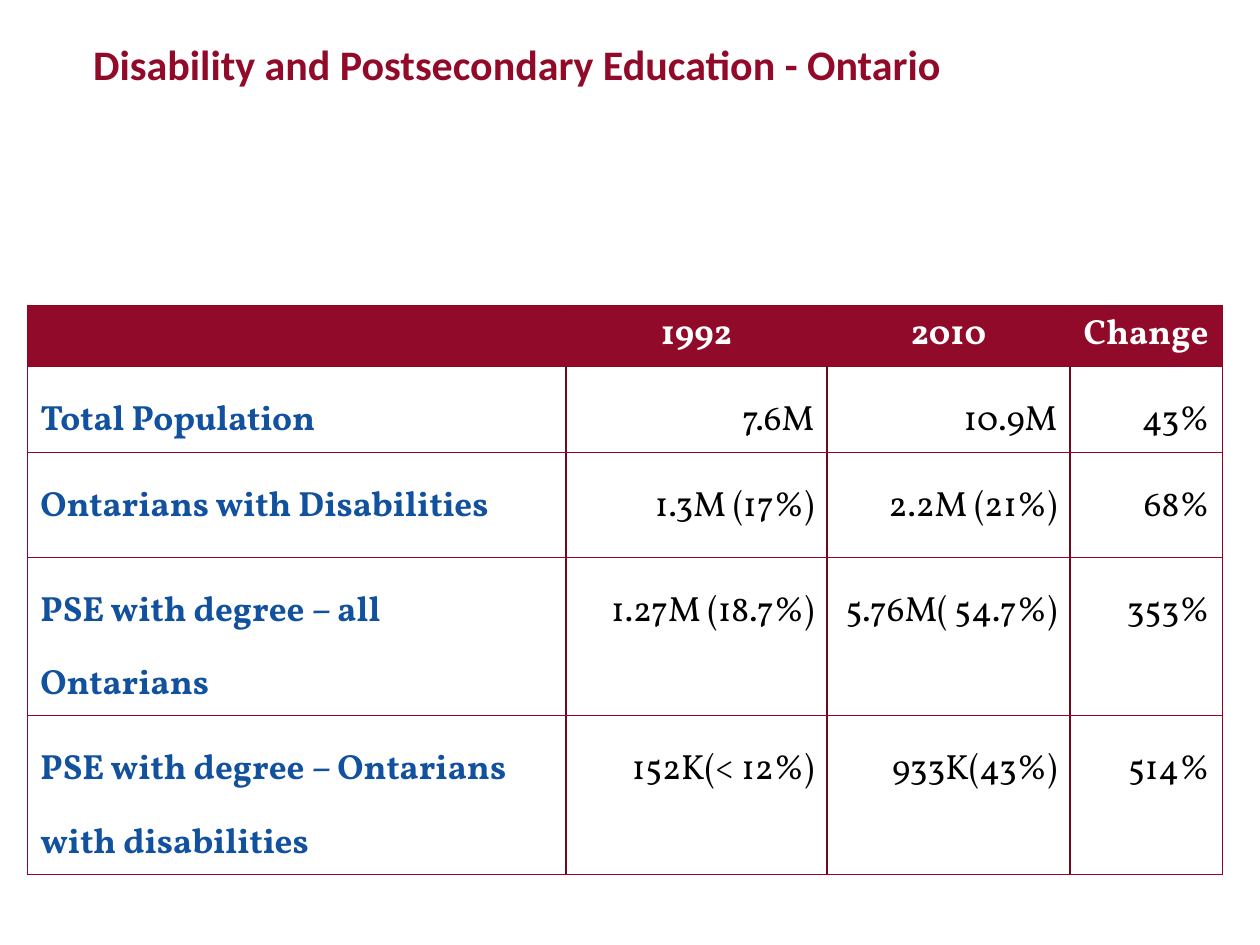
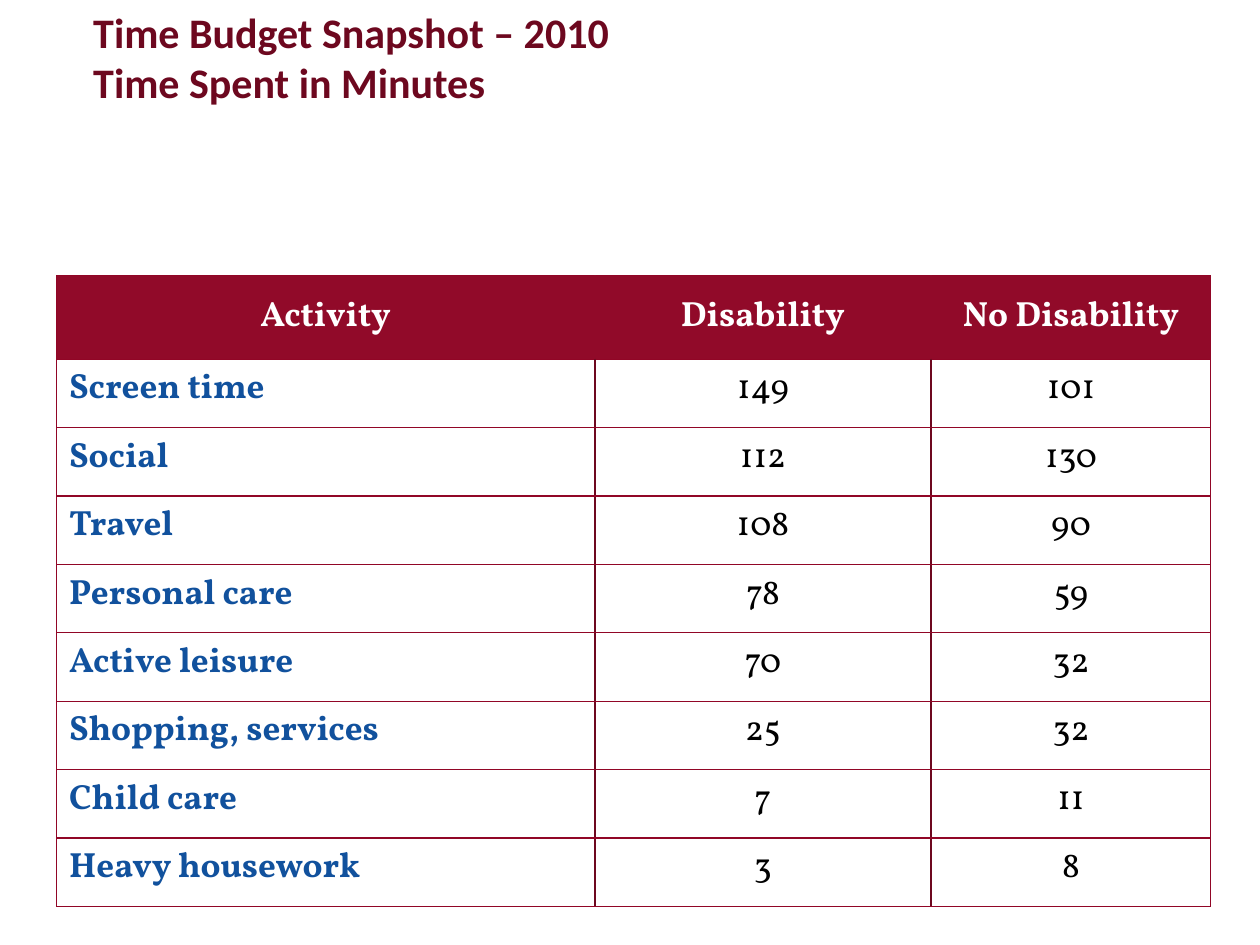
from dataclasses import dataclass

from lxml import etree
from pptx import Presentation
from pptx import util as u
from pptx.dml import color
from pptx.enum import text
from pptx.oxml import ns

LEFT, CENTER, RIGHT = text.PP_ALIGN.LEFT, text.PP_ALIGN.CENTER, text.PP_ALIGN.RIGHT
TOP, MIDDLE = text.MSO_ANCHOR.TOP, text.MSO_ANCHOR.MIDDLE


@dataclass(frozen=True)
class Theme:
    crimson: str = "910A29"
    maroon: str = "6D081F"
    rule: str = "910626"
    blue: str = "11519D"
    black: str = "000000"
    white: str = "FFFFFF"
    title_font: str = "Calibri"
    table_font: str = "Vollkorn"
    title_size: int = 24
    table_size: int = 20
    outer_line: float = 0.75
    column_line: float = 1


def write(frame, content, *, font, size, ink, bold=False, align=LEFT, spacing=None):
    paragraph = frame.paragraphs[0]
    paragraph.alignment = align
    paragraph.line_spacing = spacing
    for index, line in enumerate(content.split("\n")):
        if index:
            paragraph.add_line_break()
        run = paragraph.add_run()
        run.text = line
        run.font.name = font
        run.font.size = u.Pt(size)
        run.font.bold = bold
        run.font.color.rgb = color.RGBColor.from_string(ink)


def draw_border(cell, side, ink, width):
    properties = cell._tc.get_or_add_tcPr()
    line = etree.SubElement(properties, ns.qn(f"a:ln{side}"), w=str(u.Pt(width)))
    fill = etree.SubElement(line, ns.qn("a:solidFill"))
    etree.SubElement(fill, ns.qn("a:srgbClr"), val=ink)


class Deck:
    def __init__(self, theme):
        self.theme = theme
        self.presentation = Presentation()
        self.presentation.slide_width = u.Cm(25.4)
        self.presentation.slide_height = u.Cm(19.05)
        self.slide = None

    def add_slide(self):
        self.slide = self.presentation.slides.add_slide(self.presentation.slide_layouts[6])

    def add_title(self, content, ink, width, anchor=TOP, spacing=None):
        shape = self.slide.shapes.add_textbox(u.Cm(1.88), 0, u.Cm(width), u.Cm(2.62))
        frame = shape.text_frame
        frame.word_wrap = True
        frame.vertical_anchor = anchor
        frame.margin_left = frame.margin_bottom = 0
        frame.margin_top, frame.margin_right = u.Cm(0.13), u.Cm(0.25)
        write(frame, content, font=self.theme.title_font, size=self.theme.title_size,
              ink=ink, bold=True, spacing=spacing)

    def add_table(self, rows, left, top, widths, heights, value_align,
                  header_anchor=TOP, spacing=None):
        shape = self.slide.shapes.add_table(
            len(rows), len(widths), u.Cm(left), u.Cm(top),
            u.Cm(sum(widths)), u.Cm(sum(heights)))
        table = shape.table
        table.first_row = table.horz_banding = False
        for column, width in zip(table.columns, widths):
            column.width = u.Cm(width)
        for row, height in zip(table.rows, heights):
            row.height = u.Cm(height)
        for row_index, row in enumerate(rows):
            for column_index, content in enumerate(row):
                cell = table.cell(row_index, column_index)
                is_header, is_label = row_index == 0, column_index == 0
                self.style_cell(cell, is_header, is_label,
                                column_index == len(widths) - 1)
                if is_header:
                    cell.vertical_anchor = header_anchor
                    ink, align = self.theme.white, CENTER
                elif is_label:
                    ink, align = self.theme.blue, LEFT
                else:
                    ink, align = self.theme.black, value_align
                write(cell.text_frame, content, font=self.theme.table_font,
                      size=self.theme.table_size, ink=ink, bold=is_header or is_label,
                      align=align, spacing=None if is_header else spacing)

    def style_cell(self, cell, is_header, is_first, is_last):
        theme = self.theme
        outer = (theme.rule, theme.outer_line)
        inner = (theme.crimson if is_header else theme.maroon, theme.column_line)
        draw_border(cell, "L", *(outer if is_first else inner))
        draw_border(cell, "R", *(outer if is_last else inner))
        draw_border(cell, "T", *outer)
        draw_border(cell, "B", *outer)
        cell.fill.solid()
        cell.fill.fore_color.rgb = color.RGBColor.from_string(
            theme.crimson if is_header else theme.white)

    def save(self):
        self.presentation.save("out.pptx")


def add_education_slide(deck):
    deck.add_slide()
    deck.add_title("Disability and Postsecondary Education - Ontario", deck.theme.crimson,
                   width=17.8, anchor=MIDDLE, spacing=u.Pt(24))
    education = [
        ("", "1992", "2010", "Change"),
        ("Total Population", "7.6M", "10.9M", "43%"),
        ("Ontarians with Disabilities", "1.3M (17%)", "2.2M (21%)", "68%"),
        ("PSE with degree – all Ontarians", "1.27M (18.7%)", "5.76M( 54.7%)", "353%"),
        ("PSE with degree – Ontarians with disabilities", "152K(< 12%)", "933K(43%)", "514%"),
    ]
    deck.add_table(education, left=0.56, top=6.15, widths=[10.85, 5.26, 4.9, 3.07],
                   heights=[1.24, 1.73, 2.11, 3.2, 3.2], value_align=RIGHT, spacing=1.5)


def add_time_budget_slide(deck):
    deck.add_slide()
    deck.add_title("Time Budget Snapshot – 2010\nTime Spent in Minutes", deck.theme.maroon,
                   width=17)
    activities = [
        ("Activity", "Disability", "No Disability"),
        ("Screen time", "149", "101"),
        ("Social", "112", "130"),
        ("Travel", "108", "90"),
        ("Personal care", "78", "59"),
        ("Active leisure", "70", "32"),
        ("Shopping, services", "25", "32"),
        ("Child care", "7", "11"),
        ("Heavy housework", "3", "8"),
    ]
    deck.add_table(activities, left=1.14, top=5.56, widths=[10.85, 6.78, 5.64],
                   heights=[1.68] + [1.38] * (len(activities) - 1),
                   value_align=CENTER, header_anchor=MIDDLE)


def main():
    deck = Deck(Theme())
    add_education_slide(deck)
    add_time_budget_slide(deck)
    deck.save()


if __name__ == "__main__":
    main()
